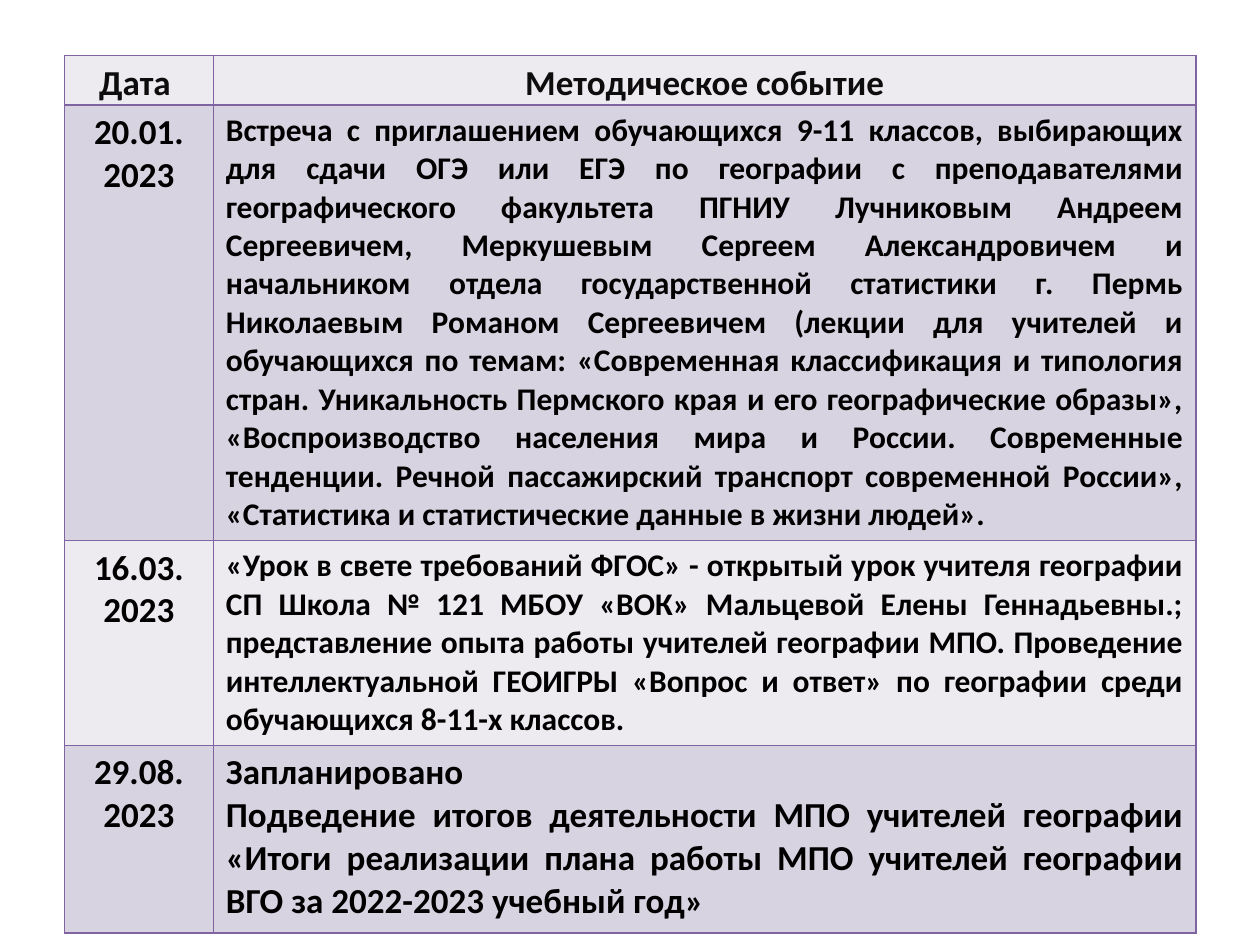
from dataclasses import dataclass

import pptx
import pptx.dml.color
import pptx.enum.text
import pptx.oxml
import pptx.oxml.ns
import pptx.table
import pptx.util
from pptx.util import Cm

ALIGN = pptx.enum.text.PP_ALIGN


@dataclass(frozen=True)
class Theme:
    font: str = "Calibri"
    large: int = 20
    small: int = 18
    heading: str = "0D0D0D"
    text: str = "000000"
    border: str = "8064A2"
    border_width: int = 1
    light: str = "EDEAF0"
    dark: str = "D8D3E0"


@dataclass(frozen=True)
class Event:
    date: tuple[str, ...]
    description: tuple[str, ...]
    size: int
    height: float


THEME = Theme()
COLUMN_WIDTHS = (3.0, 19.81)
HEADER = ("Дата ", "Методическое событие")
HEADER_HEIGHT = 0.86
EVENTS = (
    Event(
        ("20.01.", "2023"),
        (
            "Встреча с приглашением обучающихся 9-11 классов, выбирающих для сдачи ОГЭ "
            "или ЕГЭ по географии с преподавателями географического факультета ПГНИУ "
            "Лучниковым Андреем Сергеевичем, Меркушевым Сергеем Александровичем и "
            "начальником отдела государственной статистики г. Пермь Николаевым Романом "
            "Сергеевичем (лекции для учителей и обучающихся по темам: «Современная "
            "классификация и типология стран. Уникальность Пермского края и его "
            "географические образы», «Воспроизводство населения мира и России. "
            "Современные тенденции. Речной пассажирский транспорт современной России», "
            "«Статистика и статистические данные в жизни людей».",
        ),
        THEME.small,
        8.26,
    ),
    Event(
        ("16.03.", "2023"),
        (
            "«Урок в свете требований ФГОС» - открытый урок учителя географии СП Школа "
            "№ 121 МБОУ «ВОК» Мальцевой Елены Геннадьевны.; представление опыта работы "
            "учителей географии МПО. Проведение интеллектуальной ГЕОИГРЫ «Вопрос и "
            "ответ» по географии среди обучающихся 8-11-х классов.",
        ),
        THEME.small,
        3.89,
    ),
    Event(
        ("29.08.", "2023"),
        (
            "Запланировано",
            "Подведение итогов деятельности МПО учителей географии «Итоги реализации "
            "плана работы МПО учителей географии ВГО за 2022-2023 учебный год»",
        ),
        THEME.large,
        3.78,
    ),
)


def style_cell(cell: pptx.table._Cell, fill: str) -> None:
    properties = cell._tc.get_or_add_tcPr()
    width = pptx.util.Pt(THEME.border_width)
    for side in ("lnL", "lnR", "lnT", "lnB"):
        properties.append(pptx.oxml.parse_xml(
            f'<a:{side} {pptx.oxml.ns.nsdecls("a")} w="{width}"><a:solidFill>'
            f'<a:srgbClr val="{THEME.border}"/></a:solidFill></a:{side}>'
        ))
    cell.fill.solid()
    cell.fill.fore_color.rgb = pptx.dml.color.RGBColor.from_string(fill)


def write_cell(cell: pptx.table._Cell, lines: tuple[str, ...], size: int,
               color: str, alignment: ALIGN) -> None:
    cell.text_frame.text = "\n".join(lines)
    for para in cell.text_frame.paragraphs:
        para.alignment = alignment
        para.font.name = THEME.font
        para.font.size = pptx.util.Pt(size)
        para.font.bold = True
        para.font.color.rgb = pptx.dml.color.RGBColor.from_string(color)


def fill_header(table: pptx.table.Table) -> None:
    table.rows[0].height = Cm(HEADER_HEIGHT)
    for cell, title in zip(table.rows[0].cells, HEADER):
        style_cell(cell, THEME.light)
        write_cell(cell, (title,), THEME.large, THEME.heading, ALIGN.CENTER)
        cell.margin_left = cell.margin_right = Cm(0.18)
        cell.margin_top = cell.margin_bottom = 0
        cell.text_frame.paragraphs[0].line_spacing = 1.15


def fill_event(table: pptx.table.Table, index: int, event: Event) -> None:
    row = table.rows[index]
    row.height = Cm(event.height)
    for cell in row.cells:
        style_cell(cell, THEME.dark if index % 2 else THEME.light)
    date, description = row.cells
    write_cell(date, event.date, THEME.large, THEME.text, ALIGN.CENTER)
    write_cell(description, event.description, event.size, THEME.text, ALIGN.JUSTIFY)


def main() -> None:
    deck = pptx.Presentation()
    deck.slide_width, deck.slide_height = Cm(25.4), Cm(19.05)
    page = deck.slides.add_slide(deck.slide_layouts[6])
    height = HEADER_HEIGHT + sum(event.height for event in EVENTS)
    table = page.shapes.add_table(
        len(EVENTS) + 1, len(HEADER), Cm(1.3), Cm(1.12),
        Cm(sum(COLUMN_WIDTHS)), Cm(height),
    ).table
    table.first_row = table.horz_banding = False
    for column, width in zip(table.columns, COLUMN_WIDTHS):
        column.width = Cm(width)
    fill_header(table)
    for index, event in enumerate(EVENTS, start=1):
        fill_event(table, index, event)
    deck.save("out.pptx")


if __name__ == "__main__":
    main()
